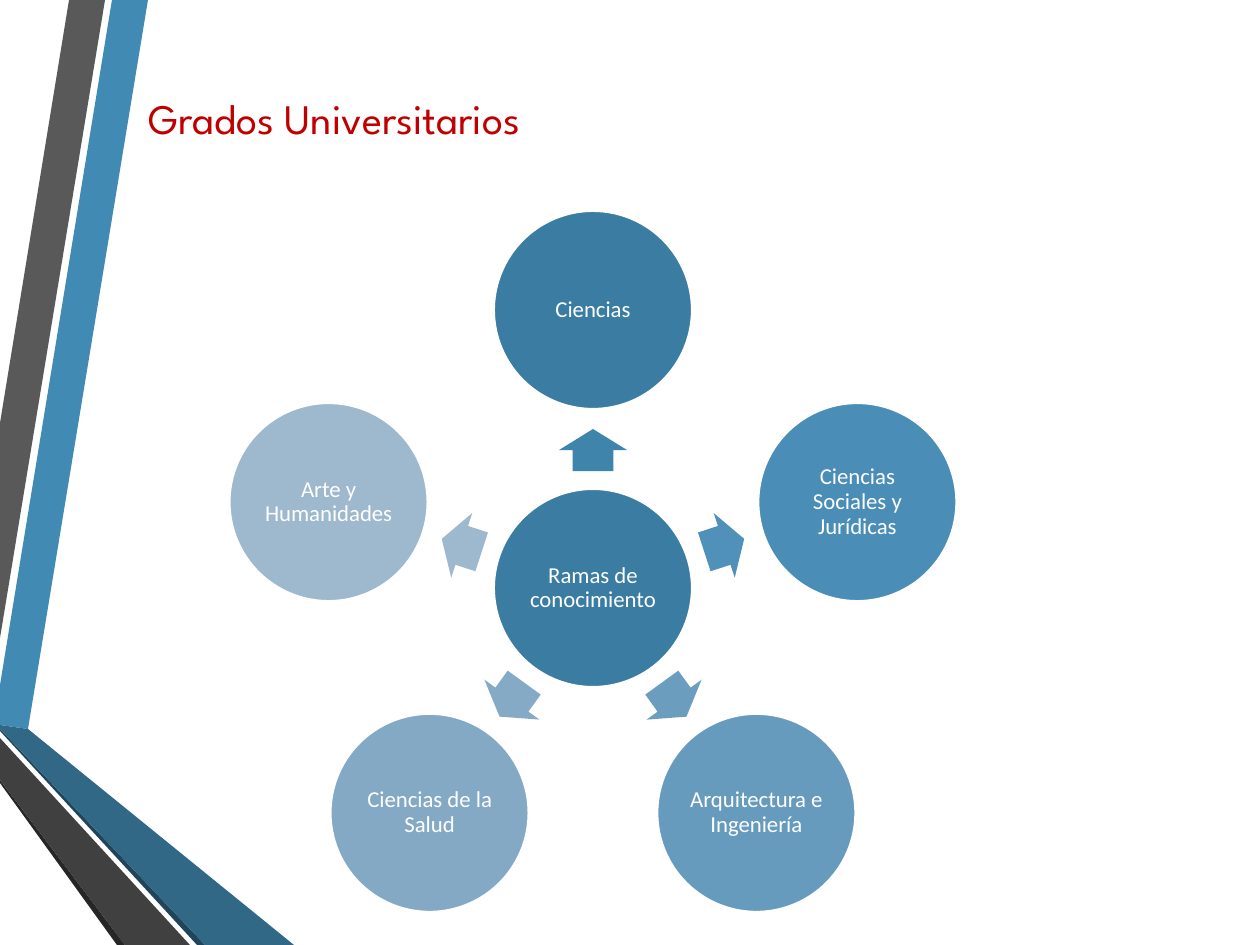
"""Builds the slide of university degree branches around a central hub."""
import math

import pptx
import pptx.dml.color
import pptx.enum.shapes
import pptx.enum.text
import pptx.util

RGB = pptx.dml.color.RGBColor
SHAPE = pptx.enum.shapes.MSO_SHAPE
ALIGN = pptx.enum.text.PP_ALIGN
MIDDLE = pptx.enum.text.MSO_ANCHOR.MIDDLE

SCALE = 914400 / 126
WHITE = RGB(0xFF, 0xFF, 0xFF)
RED = RGB(0xC0, 0x00, 0x00)
HUB = RGB(0x3B, 0x7D, 0xA2)

BANDS = [
    (RGB(0x41, 0x8A, 0xB3), [(0, 685), (0, 725), (28, 729), (148, 0), (112, 0)]),
    (RGB(0x59, 0x59, 0x59), [(105, 0), (69, 0), (0, 423), (0, 638)]),
    (RGB(0x26, 0x26, 0x26), [(0, 780), (0, 783), (117, 945), (125, 945)]),
    (RGB(0x20, 0x45, 0x5A), [(0, 729), (0, 731), (197, 945), (205, 945)]),
    (RGB(0x31, 0x68, 0x86), [(0, 729), (205, 945), (294, 945), (28, 729), (0, 725)]),
    (RGB(0x40, 0x40, 0x40), [(0, 780), (125, 945), (190, 945), (0, 738)]),
]

BRANCHES = [
    ("Ciencias", HUB, RGB(0x3E, 0x84, 0xAB)),
    ("Ciencias Sociales y Jurídicas", RGB(0x4A, 0x8D, 0xB7), RGB(0x50, 0x91, 0xBA)),
    ("Arquitectura e Ingeniería", RGB(0x67, 0x9B, 0xBD), RGB(0x6B, 0x9D, 0xBF)),
    ("Ciencias de la Salud", RGB(0x84, 0xA9, 0xC5), RGB(0x85, 0xAA, 0xC6)),
    ("Arte y Humanidades", RGB(0x9E, 0xB8, 0xCE), RGB(0x9E, 0xB8, 0xCE)),
]


def emu(px):
    return pptx.util.Emu(round(px * SCALE))


class Page:
    """Holds the current slide and its style."""

    face = "Calibri"
    head = "League Spartan"

    def __init__(self, slide):
        self.slide = slide

    def font(self, para, name, size, color):
        for run in para.runs:
            run.font.name = name
            run.font.size = pptx.util.Pt(size)
            run.font.color.rgb = color

    def title(self, text, x, y, w, h):
        box = self.slide.shapes.title
        box.left, box.top, box.width, box.height = map(emu, (x, y, w, h))
        frame = box.text_frame
        frame.text = text
        frame.vertical_anchor = MIDDLE
        para = frame.paragraphs[0]
        para.alignment = ALIGN.LEFT
        self.font(para, self.head, 24, RED)

    def band(self, color, points):
        pen = self.slide.shapes.build_freeform(*points[0], scale=SCALE)
        pen.add_line_segments(points[1:], close=True)
        self.paint(pen.convert_to_shape(), color)

    def paint(self, shape, color):
        shape.shadow.inherit = False
        shape.fill.solid()
        shape.fill.fore_color.rgb = color
        shape.line.fill.background()

    def shape(self, kind, x, y, w, h, color):
        item = self.slide.shapes.add_shape(
            kind, emu(x - w / 2), emu(y - h / 2), emu(w), emu(h))
        self.paint(item, color)
        return item

    def disc(self, text, x, y, size, color):
        item = self.shape(SHAPE.OVAL, x, y, size, size, color)
        item.line.color.rgb = WHITE
        item.line.width = pptx.util.Pt(1.75)
        frame = item.text_frame
        frame.word_wrap = True
        frame.vertical_anchor = MIDDLE
        frame.margin_left = frame.margin_right = emu(2)
        frame.margin_top = frame.margin_bottom = emu(2)
        frame.text = text
        para = frame.paragraphs[0]
        para.alignment = ALIGN.CENTER
        para.line_spacing = 0.9
        self.font(para, self.face, 13, WHITE)

    def arrow(self, x, y, turn, color):
        item = self.shape(SHAPE.RIGHT_ARROW, x, y, 42, 68, color)
        item.adjustments[0] = 0.6
        item.adjustments[1] = 0.5
        item.rotation = turn % 360


def main():
    deck = pptx.Presentation()
    deck.slide_width, deck.slide_height = emu(1260), emu(945)
    page = Page(deck.slides.add_slide(deck.slide_layouts[5]))
    for color, points in BANDS:
        page.band(color, points)
    page.title("Grados Universitarios", 136, 80, 900, 76)

    mid_x, mid_y, size = 593, 588, 199
    page.disc("Ramas de conocimiento", mid_x, mid_y, size, HUB)
    for index, (text, fill, tint) in enumerate(BRANCHES):
        turn = index * 360 / len(BRANCHES) - 90
        cos, sin = math.cos(math.radians(turn)), math.sin(math.radians(turn))
        page.arrow(mid_x + 138 * cos, mid_y + 138 * sin, turn, tint)
        page.disc(text, mid_x + 278 * cos, mid_y + 278 * sin, size, fill)
    deck.save("out.pptx")


if __name__ == "__main__":
    main()
